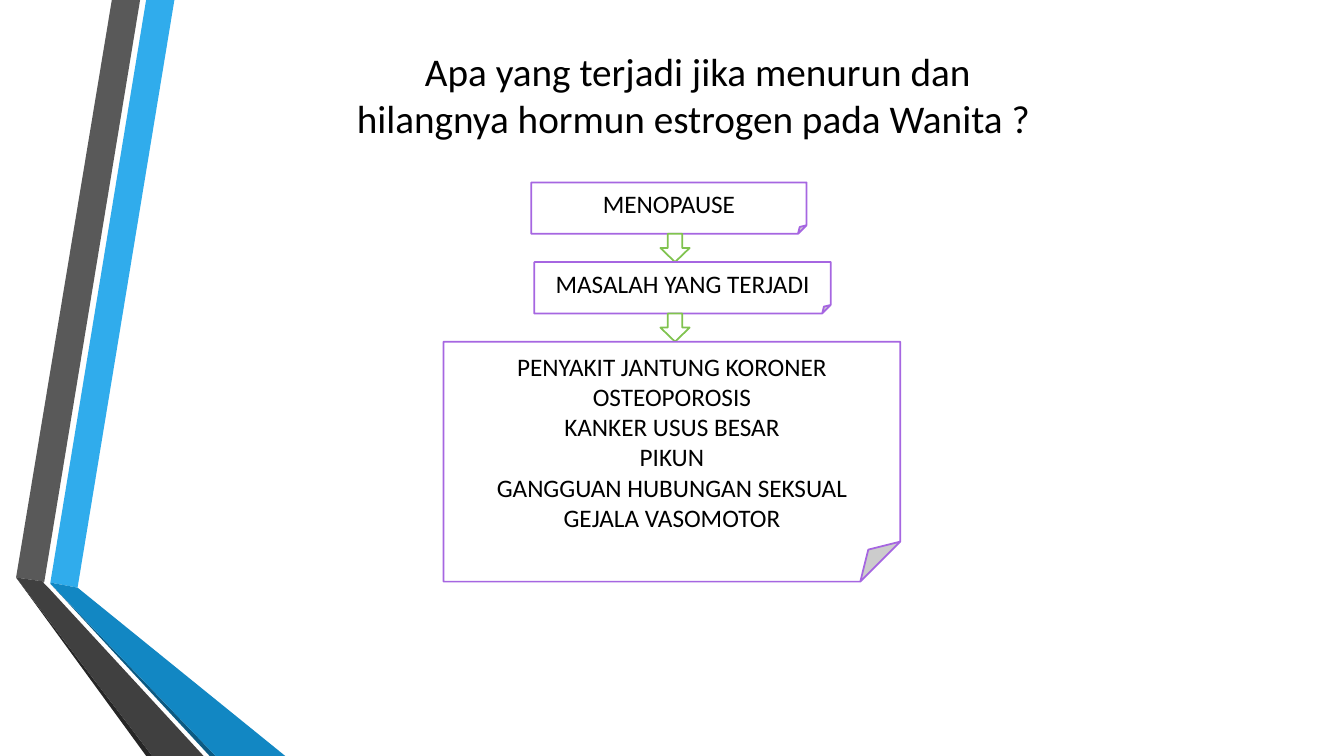
from pptx import Presentation
from pptx.dml.color import RGBColor
from pptx.enum.shapes import MSO_SHAPE
from pptx.enum.text import MSO_ANCHOR, PP_ALIGN
from pptx.util import Inches, Pt

NOTE, ARROW = MSO_SHAPE.FOLDED_CORNER, MSO_SHAPE.DOWN_ARROW
MIDDLE, CENTER = MSO_ANCHOR.MIDDLE, PP_ALIGN.CENTER

COLORS = {
    "white": "FFFFFF", "black": "000000", "purple": "A666E1", "green": "80C34F",
    "sky": "30ACEC", "blue": "1287C3", "navy": "0C5A82",
    "gray": "595959", "dark": "404040", "coal": "262626",
}
TITLE = "Apa yang terjadi jika menurun dan hilangnya hormun estrogen pada Wanita ? "

# left, width, height, lines
STEPS = [
    (5.27, 2.73, 0.51, ["MENOPAUSE"]),
    (5.3, 2.94, 0.51, ["MASALAH YANG TERJADI"]),
    (4.4, 4.53, 2.38, [
        "PENYAKIT JANTUNG KORONER",
        "OSTEOPOROSIS",
        "KANKER USUS BESAR",
        "PIKUN",
        "GANGGUAN HUBUNGAN SEKSUAL",
        "GEJALA VASOMOTOR",
    ]),
]
TOP, GAP = 1.81, 0.28
ARROW_LEFT, ARROW_WIDTH = 6.55, 0.29

RIBBONS = [
    ("sky", [(0.5, 5.78), (0.77, 5.83), (1.73, 0), (1.45, 0)]),
    ("gray", [(1.39, 0), (1.11, 0), (0.16, 5.73), (0.44, 5.77)]),
    ("coal", [(0.16, 5.73), (1.45, 7.5), (1.51, 7.5)]),
    ("navy", [(0.5, 5.79), (2.08, 7.5), (2.14, 7.5)]),
    ("blue", [(0.5, 5.79), (2.14, 7.5), (2.83, 7.5), (0.77, 5.83), (0.5, 5.78)]),
    ("dark", [(2.02, 7.5), (0.48, 5.83), (0.43, 5.78), (0.44, 5.77),
              (0.16, 5.73), (1.51, 7.5)]),
]


def color(name):
    return RGBColor.from_string(COLORS[name])


def paint(shape, fill, line=None):
    shape.shadow.inherit = False
    shape.fill.solid()
    shape.fill.fore_color.rgb = color(fill)
    if line:
        shape.line.color.rgb = color(line)
        shape.line.width = Pt(1.25)
    else:
        shape.line.fill.background()


def write(shape, text, size):
    frame = shape.text_frame
    frame.text = text
    frame.word_wrap = True
    frame.vertical_anchor = MIDDLE
    for para in frame.paragraphs:
        para.alignment = CENTER
        for run in para.runs:
            run.font.name = "Calibri"
            run.font.size = Pt(size)
            run.font.color.rgb = color("black")


def add_box(slide, kind, left, top, width, height, line):
    box = slide.shapes.add_shape(
        kind, Inches(left), Inches(top), Inches(width), Inches(height))
    paint(box, "white", line)
    return box


def add_ribbon(slide, fill, points):
    start, *rest = [(Inches(x), Inches(y)) for x, y in points]
    form = slide.shapes.build_freeform(*start)
    form.add_line_segments(rest, close=True)
    paint(form.convert_to_shape(), fill)


def main():
    deck = Presentation()
    deck.slide_width, deck.slide_height = Inches(13.33), Inches(7.5)
    slide = deck.slides.add_slide(deck.slide_layouts[5])

    for fill, points in RIBBONS:
        add_ribbon(slide, fill, points)

    title = slide.shapes.title
    title.left, title.top = Inches(3.37), Inches(0.35)
    title.width, title.height = Inches(7.1), Inches(1.17)
    write(title, TITLE, 28)

    top = TOP
    for i, (left, width, height, lines) in enumerate(STEPS):
        if i:
            add_box(slide, ARROW, ARROW_LEFT, top, ARROW_WIDTH, GAP, "green")
            top += GAP
        note = add_box(slide, NOTE, left, top, width, height, "purple")
        write(note, "\n".join(lines), 18)
        top += height

    deck.save("out.pptx")


if __name__ == "__main__":
    main()
